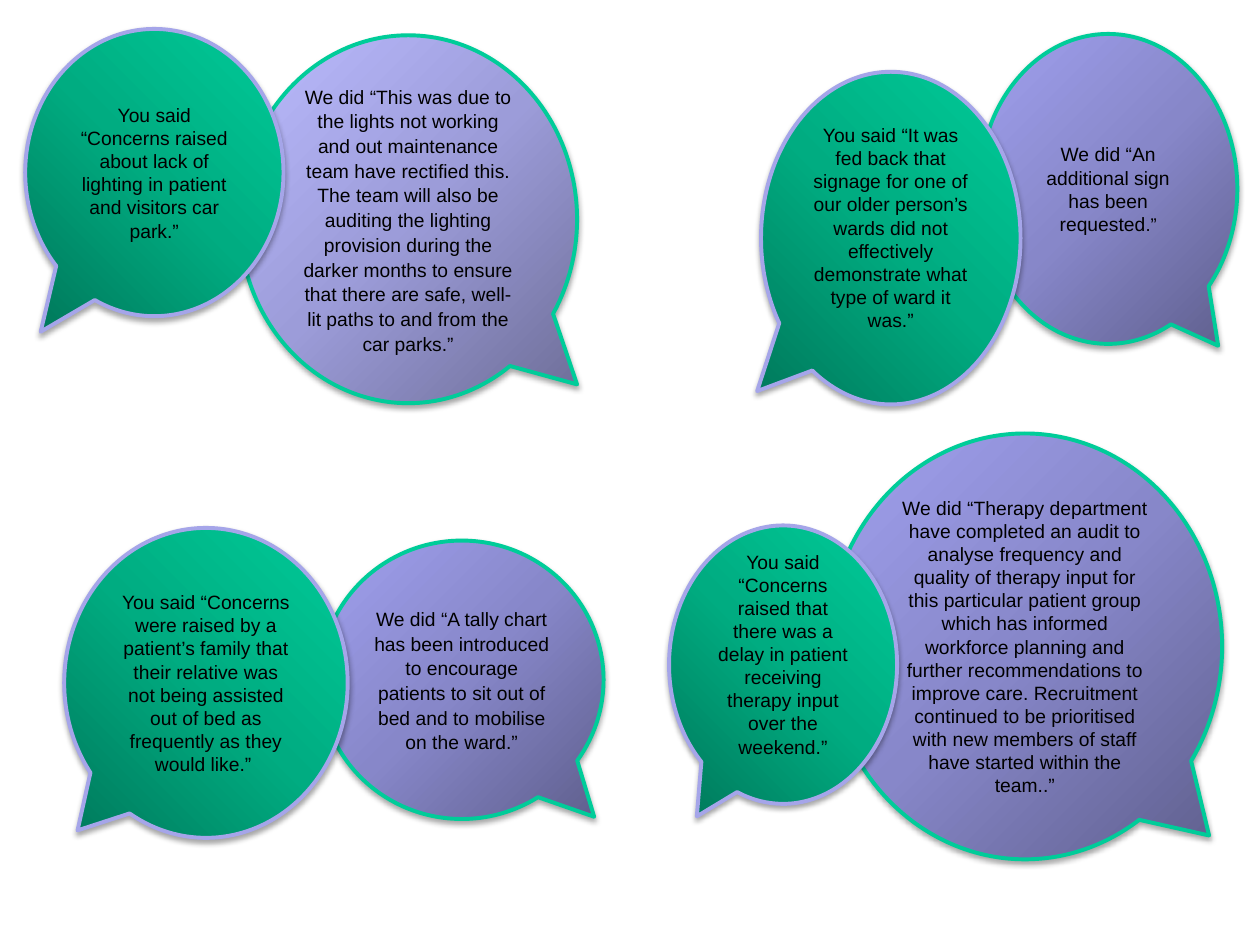
from pptx import Presentation, util as u
from pptx.dml.color import RGBColor
from pptx.enum import shapes, text
from pptx.oxml import ns, parse_xml

BLACK = RGBColor(0x00, 0x00, 0x00)
GREEN_LINE = RGBColor(0x00, 0xCC, 0x99)
LILAC_LINE = RGBColor(0xA5, 0xA5, 0xE9)
GREENS = RGBColor(0x00, 0x79, 0x5B), RGBColor(0x00, 0xAC, 0x81), RGBColor(0x00, 0xCC, 0x99)
PURPLES = RGBColor(0x5F, 0x5F, 0x8D), RGBColor(0x87, 0x87, 0xC9), RGBColor(0xA0, 0xA0, 0xEE)
LILACS = RGBColor(0x6E, 0x6E, 0x98), RGBColor(0x9C, 0x9C, 0xD9), RGBColor(0xBB, 0xBB, 0xFF)

SAID = {"colors": GREENS, "line": LILAC_LINE, "focus": 'l="0" t="100000" r="100000" b="0"'}
DID = {"colors": PURPLES, "line": GREEN_LINE, "focus": 'l="100000" t="100000" r="0" b="0"'}
DID_LIGHT = {**DID, "colors": LILACS}
LOOSE = {"spacing": 1.07, "after": 8}
RAISED = {"bottom": 2.2}

BUBBLES = [
    (DID, (65.7, 34.4, 31.3, 33.8), (0.467, 0.444), {},
     ["We did “Therapy department have completed an audit to analyse frequency and quality of "
      "therapy input for this particular patient group which has informed workforce planning and "
      "further recommendations to improve care. Recruitment continued to be prioritised with new "
      "members of staff have started within the team..”"]),
    (DID, (25.4, 42.9, 22.5, 22.1), (0.467, 0.492), LOOSE,
     ["We did “A tally chart has been introduced to encourage patients to sit out of bed and to "
      "mobilise on the ward.”"]),
    (SAID, (5.1, 41.9, 22.5, 24.6), (-0.453, 0.476), {},
     ["You said “Concerns were raised by a patient’s family that their relative was not being "
      "assisted out of bed as frequently as they would like.” "]),
    (DID_LIGHT, (19, 2.8, 26.8, 29.2), (0.5, 0.449), LOOSE,
     ["We did “This was due to the lights not working and out maintenance team have rectified "
      "this. The team will also be auditing the lighting provision during the darker months to "
      "ensure that there are safe, well-lit paths to and from the car parks.”"]),
    (DID, (77.7, 2.7, 20.5, 24.6), (0.426, 0.506), {},
     ["We did “An additional sign has been requested", ".”"]),
    (SAID, (53.1, 41.7, 18.1, 22.1), (-0.378, 0.545), RAISED,
     ["You said “Concerns raised that there was a delay in patient receiving therapy input over "
      "the weekend.”"]),
    (SAID, (60.4, 5.7, 20.6, 26.4), (-0.515, 0.46), RAISED,
     ["You said “It was fed back that signage for one of our older person’s wards did not "
      "effectively demonstrate what type of ward it was.”"]),
    (SAID, (2, 2.3, 20.5, 22.8), (-0.44, 0.554), {},
     ["You said “Concerns raised about lack of lighting in patient and visitors car park.”"]),
]

presentation = Presentation()
presentation.slide_width = u.Inches(10)
presentation.slide_height = u.Inches(7.5)
slide = presentation.slides.add_slide(presentation.slide_layouts[6])
column = presentation.slide_width / 100
row = presentation.slide_height / 75

for style, (left, top, width, height), tail, layout, wording in BUBBLES:
    shape = slide.shapes.add_shape(
        shapes.MSO_SHAPE.OVAL_CALLOUT,
        round(left * column), round(top * row), round(width * column), round(height * row))
    shape.adjustments[0], shape.adjustments[1] = tail
    shape.line.color.rgb = style["line"]
    shape.line.width = u.Pt(2.25)

    stops = "".join(
        f'<a:gs pos="{position}"><a:srgbClr val="{color}"/></a:gs>'
        for position, color in zip((0, 50000, 100000), style["colors"]))
    shape.element.spPr.prstGeom.addnext(parse_xml(
        f'<a:gradFill {ns.nsdecls("a")} rotWithShape="1"><a:gsLst>{stops}</a:gsLst>'
        f'<a:path path="circle"><a:fillToRect {style["focus"]}/></a:path></a:gradFill>'))
    shape.shadow.inherit = False
    shape.element.spPr.find(ns.qn("a:effectLst")).append(parse_xml(
        f'<a:outerShdw {ns.nsdecls("a")} blurRad="{u.Pt(3.1)}" dist="{u.Pt(1.8)}" dir="5400000" '
        f'rotWithShape="0"><a:srgbClr val="{BLACK}"><a:alpha val="35000"/></a:srgbClr>'
        '</a:outerShdw>'))

    frame = shape.text_frame
    frame.word_wrap = True
    frame.vertical_anchor = text.MSO_ANCHOR.MIDDLE
    frame.margin_bottom = round(layout.get("bottom", 0.5) * row)
    paragraph = frame.paragraphs[0]
    paragraph.alignment = text.PP_ALIGN.CENTER
    if "spacing" in layout:
        paragraph.line_spacing = layout["spacing"]
        paragraph.space_after = u.Pt(layout["after"])
    for words, size in zip(wording, (11, 10.5)):
        run = paragraph.add_run()
        run.text = words
        run.font.name = "Arial"
        run.font.size = u.Pt(size)
        run.font.color.rgb = BLACK

presentation.save("out.pptx")
